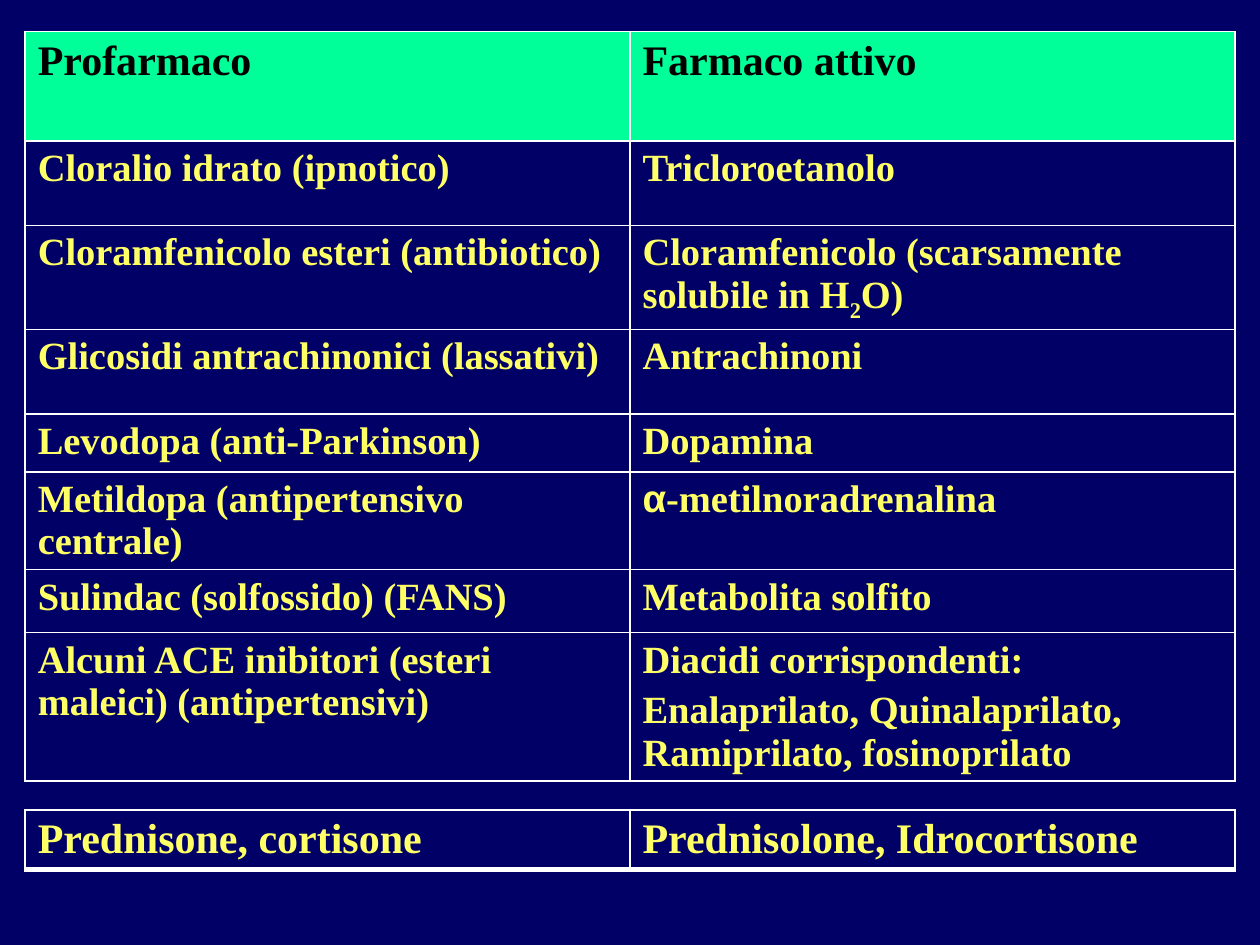
from lxml import etree
from pptx import Presentation
from pptx import util as u
from pptx.dml.color import RGBColor
from pptx.enum import text
from pptx.oxml.ns import qn

COLORS = {"background": "000066", "header": "00FF99", "black": "000000",
          "yellow": "FFFF66", "white": "FFFFFF"}
SERIF = "Times New Roman"


def write(cell, content, size=22, color="yellow"):
    """Fill a cell; each line is a string or a list of (text, font, baseline) runs."""
    lines = content if isinstance(content, tuple) else (content,)
    for index, line in enumerate(lines):
        frame = cell.text_frame
        paragraph = frame.add_paragraph() if index else frame.paragraphs[0]
        spacing = etree.SubElement(paragraph._p.get_or_add_pPr(), qn("a:spcBef"))
        etree.SubElement(spacing, qn("a:spcPct"), val="20000")
        for words, font, baseline in [(line, SERIF, 0)] if isinstance(line, str) else line:
            run = paragraph.add_run()
            run.text = words
            run.font.name = font
            run.font.size = u.Pt(size)
            run.font.bold = True
            run.font.color.rgb = RGBColor.from_string(COLORS[color])
            if baseline:
                run._r.get_or_add_rPr().set("baseline", str(baseline * 1000))


def add_bordered_table(top, heights, bottom_width=1):
    """Add a two-column table with white borders and no fill."""
    frame = slide.shapes.add_table(len(heights), 2, u.Inches(0.2), u.Inches(top),
                                   u.Inches(9.61), u.Inches(sum(heights)))
    table = frame.table
    table.first_row = table.horz_banding = False
    for column in table.columns:
        column.width = u.Inches(4.8)
    for row, height in zip(table.rows, heights):
        row.height = u.Inches(height)
    for cell in table.iter_cells():
        properties = cell._tc.get_or_add_tcPr()
        for side in "LRTB":
            width = bottom_width if side == "B" else 1
            line = etree.SubElement(properties, qn(f"a:ln{side}"), w=str(u.Pt(width)))
            fill = etree.SubElement(line, qn("a:solidFill"))
            etree.SubElement(fill, qn("a:srgbClr"), val=COLORS["white"])
        cell.fill.background()
    return table


presentation = Presentation()
presentation.slide_width = u.Inches(10)
presentation.slide_height = u.Inches(7.5)
slide = presentation.slides.add_slide(presentation.slide_layouts[6])
slide.background.fill.solid()
slide.background.fill.fore_color.rgb = RGBColor.from_string(COLORS["background"])

# Prodrugs and their active drugs: row height, then both cells
drugs = [
    (0.87, "Profarmaco", "Farmaco attivo"),
    (0.67, "Cloralio idrato (ipnotico)", "Tricloroetanolo"),
    (0.67, "Cloramfenicolo esteri (antibiotico)",
     [("Cloramfenicolo (scarsamente solubile in H", SERIF, 0),
      ("2", SERIF, -25), ("O)", SERIF, 0)]),
    (0.67, "Glicosidi antrachinonici (lassativi)", "Antrachinoni"),
    (0.46, "Levodopa (anti-Parkinson)", "Dopamina"),
    (0.67, "Metildopa (antipertensivo centrale)",
     [("α", "Arial", 0), ("-metilnoradrenalina", SERIF, 0)]),
    (0.5, "Sulindac (solfossido) (FANS)", "Metabolita solfito"),
    (0.67, "Alcuni ACE inibitori (esteri maleici) (antipertensivi)",
     ("Diacidi corrispondenti:",
      "Enalaprilato, Quinalaprilato, Ramiprilato, fosinoprilato")),
]
drug_table = add_bordered_table(0.25, [height for height, *_ in drugs])
for row_index, (_, *contents) in enumerate(drugs):
    for column_index, content in enumerate(contents):
        cell = drug_table.cell(row_index, column_index)
        if row_index == 0:
            cell.fill.solid()
            cell.fill.fore_color.rgb = RGBColor.from_string(COLORS["header"])
            write(cell, content, size=24, color="black")
        else:
            write(cell, content)

# Steroids
steroid_table = add_bordered_table(6.43, [0.41], bottom_width=3)
for cell, content in zip(steroid_table.iter_cells(),
                         ["Prednisone, cortisone", "Prednisolone, Idrocortisone"]):
    cell.vertical_anchor = text.MSO_ANCHOR.MIDDLE
    write(cell, content, size=24)

presentation.save("out.pptx")
